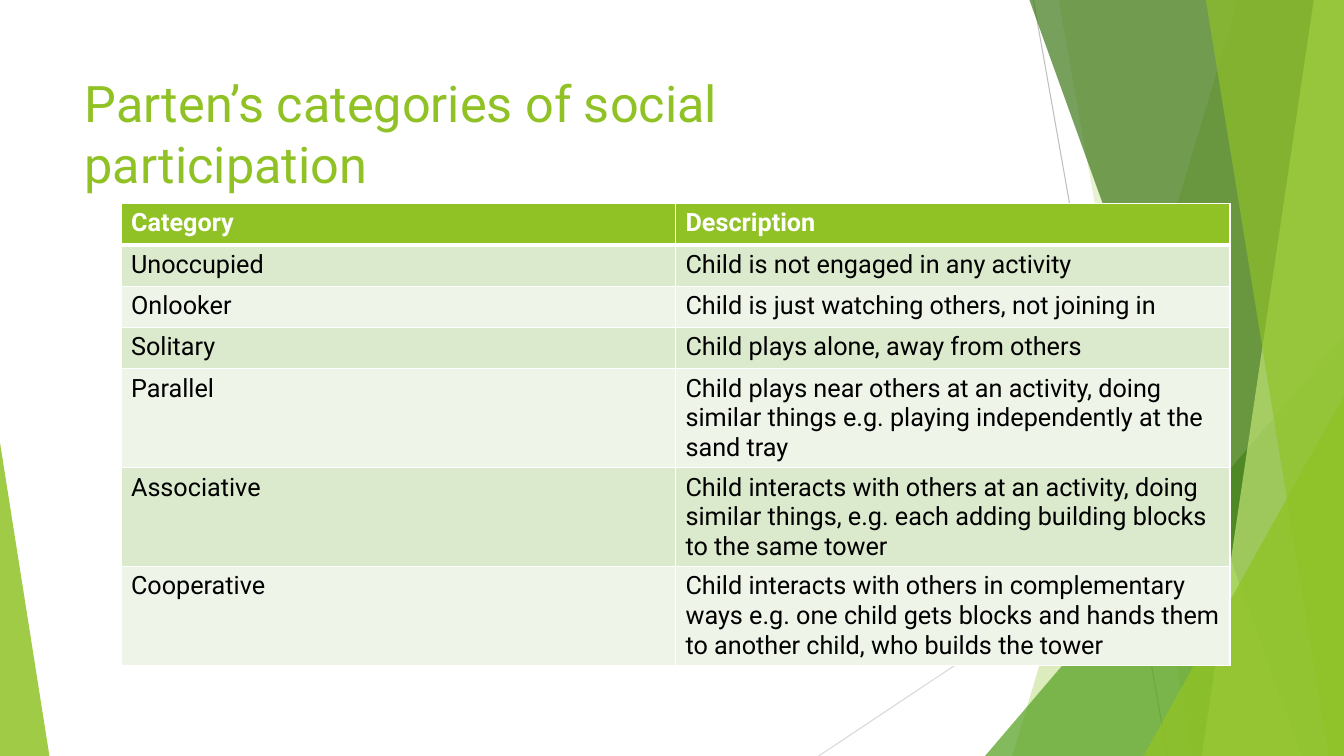
from pptx import Presentation
from pptx.dml.color import RGBColor
from pptx.enum.shapes import MSO_CONNECTOR, MSO_SHAPE
from pptx.enum.text import MSO_ANCHOR, PP_ALIGN
from pptx.oxml.ns import qn
from pptx.util import Inches, Pt
from lxml.etree import SubElement

# Content
TITLE = "Parten’s categories of social participation"
ROWS = [
    ("Category", "Description"),
    ("Unoccupied", "Child is not engaged in any activity"),
    ("Onlooker", "Child is just watching others, not joining in"),
    ("Solitary", "Child plays alone, away from others"),
    ("Parallel", "Child plays near others at an activity, doing similar things "
                 "e.g. playing independently at the sand tray"),
    ("Associative", "Child interacts with others at an activity, doing similar things, "
                    "e.g. each adding building blocks to the same tower"),
    ("Cooperative", "Child interacts with others in complementary ways e.g. one child "
                    "gets blocks and hands them to another child, who builds the tower"),
]
COLORS = {
    "lime": "90C226", "green": "54A021", "forest": "3F7819", "pale": "C0E474",
    "band_dark": "DBE9CD", "band_light": "EEF4E8", "white": "FFFFFF",
    "black": "000000", "grey": "BFBFBF", "light_grey": "D9D9D9",
}
FONT = "Roboto"
W, H = 13.33, 7.5
COL_W, ROW_H = 5.5, 0.41

# Decoration, back to front: rays are (start, end, colour)
RAYS = [((10.25, 0), (11.58, H), "grey"), ((W, 4.03), (8.12, H), "light_grey")]
# Bands run to the right edge: (kind, left at top, left at bottom, colour, opacity %)
# Wedges stand on the bottom edge: (kind, left, width, height, apex, colour, opacity %)
FACETS = [
    ("band", 12.28, 10.04, "lime", 30),
    ("band", 10.5, 11.83, "lime", 20),
    ("wedge", 9.77, 3.56, 4.17, 1, "green", 72),
    ("band", 10.21, 12.91, "forest", 70),
    ("band", 13.03, 11.92, "pale", 70),
    ("band", 11.96, 13.18, "lime", 65),
    ("wedge", 11.34, 1.99, 3.57, 1, "lime", 80),
    ("wedge", 0, 0.49, 3.11, 0, "lime", 85),
]


def rgb(name):
    return RGBColor.from_string(COLORS[name])


def add_band(shapes, top_x, bottom_x):
    fb = shapes.build_freeform(Inches(top_x), 0)
    corners = [(W, 0), (W, H), (bottom_x, H)]
    fb.add_line_segments([(Inches(x), Inches(y)) for x, y in corners], close=True)
    return fb.convert_to_shape()


def add_wedge(shapes, left, width, height, apex):
    sp = shapes.add_shape(MSO_SHAPE.ISOSCELES_TRIANGLE, Inches(left), Inches(H - height),
                          Inches(width), Inches(height))
    sp.adjustments[0] = apex
    return sp


def paint(sp, color, opacity):
    sp.shadow.inherit = False
    sp.line.fill.background()
    sp.fill.solid()
    sp.fill.fore_color.rgb = rgb(color)
    clr = sp.fill._xPr.find(qn("a:solidFill"))[0]
    SubElement(clr, qn("a:alpha"), val=str(opacity * 1000))


def set_borders(cell, top, bottom):
    tcPr = cell._tc.get_or_add_tcPr()
    for side, width in (("L", 1), ("R", 1), ("T", top), ("B", bottom)):
        ln = SubElement(tcPr, qn("a:ln" + side), w=str(Pt(width)))
        fill = SubElement(ln, qn("a:solidFill"))
        SubElement(fill, qn("a:srgbClr"), val=COLORS["white"])


def set_font(p, size, color, bold=False):
    p.font.name, p.font.size, p.font.bold = FONT, Pt(size), bold
    p.font.color.rgb = rgb(color)


prs = Presentation()
prs.slide_width, prs.slide_height = Inches(W), Inches(H)
s = prs.slides.add_slide(prs.slide_layouts[5])

# Background rays and facets
for start, end, color in RAYS:
    ray = s.shapes.add_connector(MSO_CONNECTOR.STRAIGHT,
                                 *(Inches(v) for v in start + end))
    ray.line.color.rgb = rgb(color)
    ray.line.width = Pt(0.75)
    SubElement(ray._element.spPr, qn("a:effectLst"))
for kind, *size, color, opacity in FACETS:
    add = add_band if kind == "band" else add_wedge
    paint(add(s.shapes, *size), color, opacity)

# Title, in front of the facets
title = s.shapes.title
s.shapes._spTree.append(title._element)
title.left, title.top, title.width, title.height = (
    Inches(v) for v in (0.74, 0.67, 9.4, 1.44))
tf = title.text_frame
tf.text = TITLE
tf.word_wrap = True
tf.vertical_anchor = MSO_ANCHOR.TOP
tf.margin_right = Inches(0.4)
p = tf.paragraphs[0]
p.alignment = PP_ALIGN.LEFT
set_font(p, 36, "lime")

# Table: rows grow with their text
table = s.shapes.add_table(len(ROWS), 2, Inches(1.2), Inches(2.02),
                           Inches(2 * COL_W), Inches(len(ROWS) * ROW_H)).table
for i, row in enumerate(ROWS):
    table.rows[i].height = Inches(ROW_H)
    header = i == 0
    fill = "lime" if header else ("band_dark" if i % 2 else "band_light")
    for j, text in enumerate(row):
        cell = table.cell(i, j)
        cell.text = text
        set_borders(cell, 3 if i == 1 else 1, 3 if header else 1)
        cell.fill.solid()
        cell.fill.fore_color.rgb = rgb(fill)
        set_font(cell.text_frame.paragraphs[0], 18, "white" if header else "black", header)

prs.save("out.pptx")
